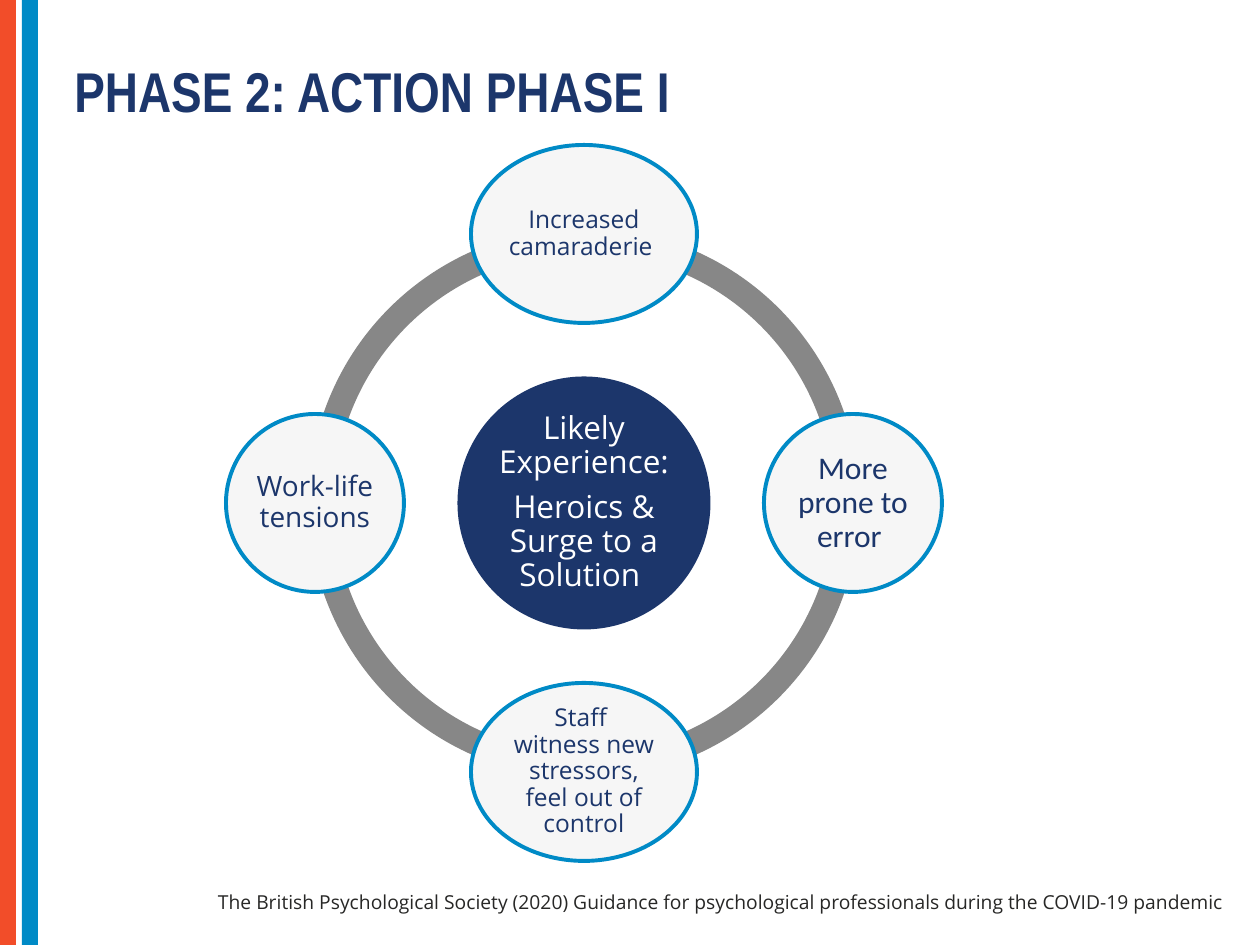
from copy import deepcopy

from pptx import Presentation
from pptx.dml.color import RGBColor
from pptx.enum.shapes import MSO_SHAPE
from pptx.enum.text import MSO_ANCHOR, PP_ALIGN
from pptx.oxml.ns import qn
from pptx.util import Emu, Pt

RECTANGLE, OVAL, ARC = MSO_SHAPE.RECTANGLE, MSO_SHAPE.OVAL, MSO_SHAPE.BLOCK_ARC
LEFT, CENTER, RIGHT = PP_ALIGN.LEFT, PP_ALIGN.CENTER, PP_ALIGN.RIGHT
MIDDLE = MSO_ANCHOR.MIDDLE

COLORS = {
    "orange": "F24D29",
    "blue": "008AC6",
    "navy": "1C366B",
    "gray": "878787",
    "pale": "F6F6F6",
    "white": "FFFFFF",
    "ink": "272726",
}
WIDTH, HEIGHT = 1260, 945
CENTER_X, CENTER_Y = 584, 503
RING_SIZE, HUB_SIZE, ORBIT = 551, 253, 269
NODE_HEIGHT = 178
QUARTER_TURN = 54
RING_THICKNESS = 0.046


def px(length):
    return Emu(round(length * 914400 / 126))


def color(name):
    return RGBColor.from_string(COLORS[name])


def add_shape(page, kind, left, top, width, height, fill, line=None):
    shape = page.shapes.add_shape(kind, px(left), px(top), px(width), px(height))
    shape.shadow.inherit = False
    shape.fill.solid()
    shape.fill.fore_color.rgb = color(fill)
    if line:
        shape.line.color.rgb = color(line)
        shape.line.width = Pt(2.25)
    else:
        shape.line.fill.background()
    return shape


def write(frame, lines, font, size, tint, align, bold=False, space_after=0):
    frame.word_wrap = True
    values = {"name": font, "size": Pt(size), "bold": bold}
    for index, line in enumerate(lines):
        para = frame.add_paragraph() if index else frame.paragraphs[0]
        para.text = line
        para.alignment = align
        para.line_spacing = 0.9
        para.space_after = Pt(space_after)
        for span in para.runs:
            for key, value in values.items():
                setattr(span.font, key, value)
            span.font.color.rgb = color(tint)
        for line_break in para._p.findall(qn("a:br")):
            line_break.append(deepcopy(para.runs[0]._r.rPr))


def add_text(page, left, top, width, height, text, **style):
    box = page.shapes.add_textbox(px(left), px(top), px(width), px(height))
    write(box.text_frame, [text], **style)


def add_circle(page, x, y, width, height, lines, font, size, tint, fill, line=None):
    circle = add_shape(page, OVAL, x - width / 2, y - height / 2, width, height, fill, line)
    frame = circle.text_frame
    frame.vertical_anchor = MIDDLE
    for side in ("left", "top", "right", "bottom"):
        setattr(frame, f"margin_{side}", px(3))
    write(frame, lines, font, size, tint, CENTER, space_after=round(size / 3))


def add_ring(page):
    for quarter in (2, 1, 0, 3):
        arc = add_shape(page, ARC, CENTER_X - RING_SIZE / 2, CENTER_Y - RING_SIZE / 2,
                        RING_SIZE, RING_SIZE, "gray")
        arc.adjustments[0] = quarter * QUARTER_TURN
        arc.adjustments[1] = (quarter + 1) % 4 * QUARTER_TURN
        arc.adjustments[2] = RING_THICKNESS


def main():
    deck = Presentation()
    deck.slide_width, deck.slide_height = px(WIDTH), px(HEIGHT)
    page = deck.slides.add_slide(deck.slide_layouts[6])

    for left, fill in ((0, "orange"), (22, "blue")):
        add_shape(page, RECTANGLE, left, 0, 16, HEIGHT, fill)
    add_text(page, 62, 58, 932, 66, "PHASE 2: ACTION PHASE I",
             font="Arial Narrow", size=32, tint="navy", align=LEFT, bold=True)

    add_ring(page)
    add_circle(page, CENTER_X, CENTER_Y, HUB_SIZE, HUB_SIZE,
               ["Likely Experience: ", "Heroics & Surge to a Solution "],
               "Open Sans", 18, "white", "navy")
    nodes = (
        (0, -1, 226, "Increased camaraderie ", "Open Sans", 14),
        (1, 0, 178, "More prone to error ", "Calibri", 18),
        (0, 1, 226, "Staff \vwitness new stressors, feel out of control", "Open Sans", 14),
        (-1, 0, 178, "Work-life tensions", "Open Sans", 16),
    )
    for across, down, width, text, font, size in nodes:
        add_circle(page, CENTER_X + across * ORBIT, CENTER_Y + down * ORBIT,
                   width, NODE_HEIGHT, [text], font, size, "navy", "pale", "blue")

    add_text(page, 64, 887, 1173, 45,
             "The British Psychological Society (2020) Guidance for psychological "
             "professionals during the COVID-19 pandemic",
             font="Open Sans", size=11, tint="ink", align=RIGHT)
    deck.save("out.pptx")


if __name__ == "__main__":
    main()
